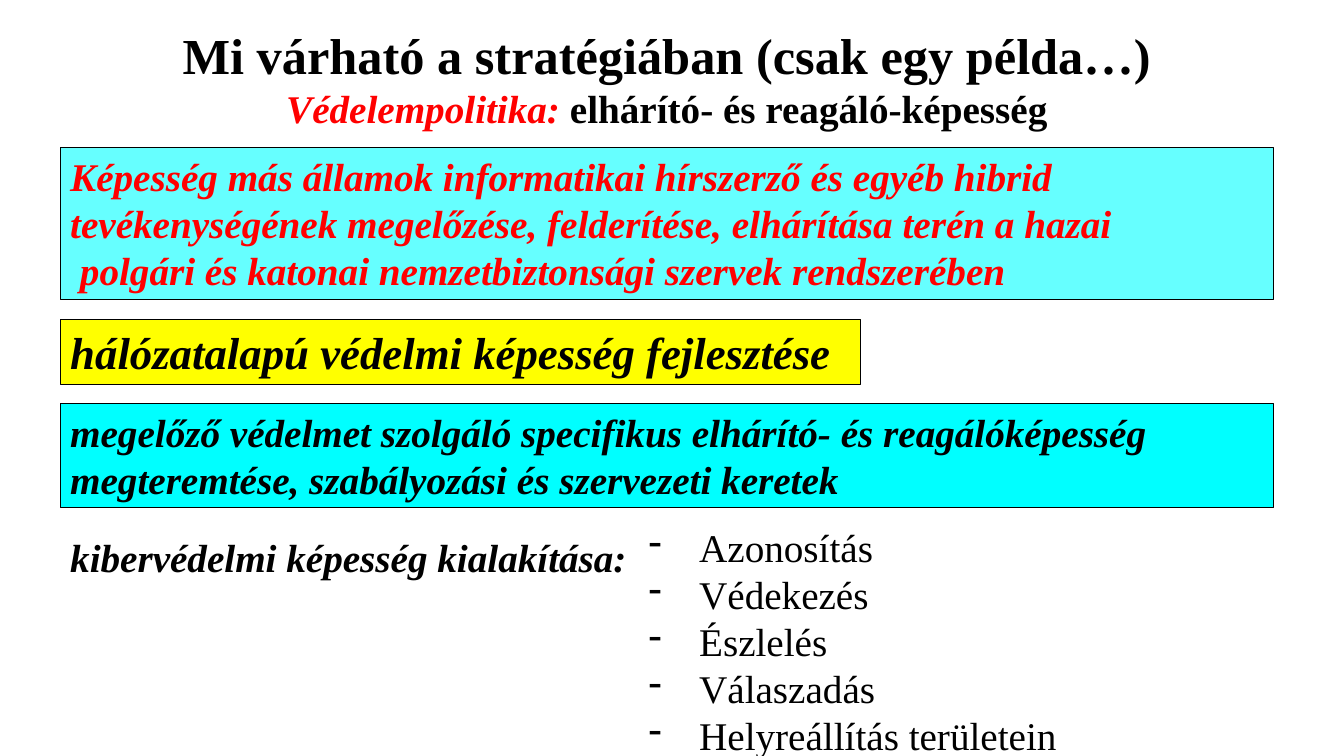
from dataclasses import dataclass

from lxml import etree
from pptx import Presentation
from pptx.dml.color import RGBColor
from pptx.enum.shapes import MSO_SHAPE
from pptx.enum.text import MSO_ANCHOR, MSO_AUTO_SIZE, PP_ALIGN
from pptx.oxml.ns import qn
from pptx.util import Cm, Pt

RECTANGLE = MSO_SHAPE.RECTANGLE
TOP = MSO_ANCHOR.TOP
NO_AUTO_SIZE = MSO_AUTO_SIZE.NONE
LEFT = PP_ALIGN.LEFT
CENTER = PP_ALIGN.CENTER

FONT = "Times New Roman"
TITLE_LAYOUT = 5
MARGIN = 1.52
FULL_WIDTH = 30.58
BULLET_INDENT = Cm(1.27)
COLORS = {
    "black": "000000",
    "red": "FF0000",
    "light cyan": "66FFFF",
    "yellow": "FFFF00",
    "cyan": "00FFFF",
}


@dataclass
class Statement:
    lines: list[str]
    top: float
    width: float
    height: float
    fill: str | None = None
    color: str = "black"
    size: int = 28


STATEMENTS = [
    Statement(
        [
            "Képesség más államok informatikai hírszerző és egyéb hibrid "
            "tevékenységének megelőzése, felderítése, elhárítása terén a hazai",
            " polgári és katonai nemzetbiztonsági szervek rendszerében",
        ],
        3.71, FULL_WIDTH, 3.84, fill="light cyan", color="red",
    ),
    Statement(["hálózatalapú védelmi képesség fejlesztése"],
              8.05, 20.17, 1.63, fill="yellow", size=32),
    Statement(
        ["megelőző védelmet szolgáló specifikus elhárító- és reagálóképesség "
         "megteremtése, szabályozási és szervezeti keretek"],
        10.16, FULL_WIDTH, 2.64, fill="cyan",
    ),
    Statement(["kibervédelmi képesség kialakítása:"], 13.31, 14.91, 1.45),
]
CAPABILITIES = ["Azonosítás", "Védekezés", "Észlelés", "Válaszadás",
                "Helyreállítás területein"]


def rgb(name: str) -> RGBColor:
    return RGBColor.from_string(COLORS[name])


def add_text(paragraph, text: str, *, size: int = 28, color: str = "black",
             bold: bool = True, italic: bool = False) -> None:
    run = paragraph.add_run()
    run.text = text
    font = run.font
    font.name = FONT
    font.size = Pt(size)
    font.bold = bold
    font.italic = italic
    font.color.rgb = rgb(color)


def prepare_frame(shape):
    frame = shape.text_frame
    frame.word_wrap = True
    frame.auto_size = NO_AUTO_SIZE
    frame.vertical_anchor = TOP
    return frame


def add_paragraph(frame, index: int, alignment=LEFT):
    paragraph = frame.add_paragraph() if index else frame.paragraphs[0]
    paragraph.alignment = alignment
    return paragraph


def add_dash_bullet(paragraph) -> None:
    properties = paragraph._p.get_or_add_pPr()
    properties.set("marL", str(BULLET_INDENT))
    properties.set("indent", str(-BULLET_INDENT))
    etree.SubElement(properties, qn("a:buFontTx"))
    etree.SubElement(properties, qn("a:buChar")).set("char", "-")


def fill_title(title) -> None:
    title.left, title.top = Cm(4.22), Cm(0.48)
    title.width, title.height = Cm(25.17), Cm(3)
    paragraph = add_paragraph(prepare_frame(title), 0, CENTER)
    add_text(paragraph, "Mi várható a stratégiában (csak egy példa…)", size=36)
    paragraph.add_line_break()
    add_text(paragraph, "Védelempolitika:", color="red", italic=True)
    add_text(paragraph, " elhárító- és reagáló-képesség")


def add_statement(slide, statement: Statement) -> None:
    box = (Cm(MARGIN), Cm(statement.top), Cm(statement.width), Cm(statement.height))
    if statement.fill:
        shape = slide.shapes.add_shape(RECTANGLE, *box)
        shape.shadow.inherit = False
        shape.fill.solid()
        shape.fill.fore_color.rgb = rgb(statement.fill)
        shape.line.color.rgb = rgb("black")
        shape.line.width = Pt(0.75)
    else:
        shape = slide.shapes.add_textbox(*box)
    frame = prepare_frame(shape)
    for index, line in enumerate(statement.lines):
        add_text(add_paragraph(frame, index), line, size=statement.size,
                 color=statement.color, italic=True)


def add_capabilities(slide) -> None:
    shape = slide.shapes.add_textbox(Cm(16.1), Cm(13.06), Cm(10.9), Cm(6.25))
    frame = prepare_frame(shape)
    for index, capability in enumerate(CAPABILITIES):
        paragraph = add_paragraph(frame, index)
        add_dash_bullet(paragraph)
        add_text(paragraph, capability, bold=False)


def main() -> None:
    presentation = Presentation()
    presentation.slide_width = Cm(33.87)
    presentation.slide_height = Cm(19.05)
    slide = presentation.slides.add_slide(presentation.slide_layouts[TITLE_LAYOUT])
    fill_title(slide.shapes.title)
    for statement in STATEMENTS:
        add_statement(slide, statement)
    add_capabilities(slide)
    presentation.save("out.pptx")


if __name__ == "__main__":
    main()
